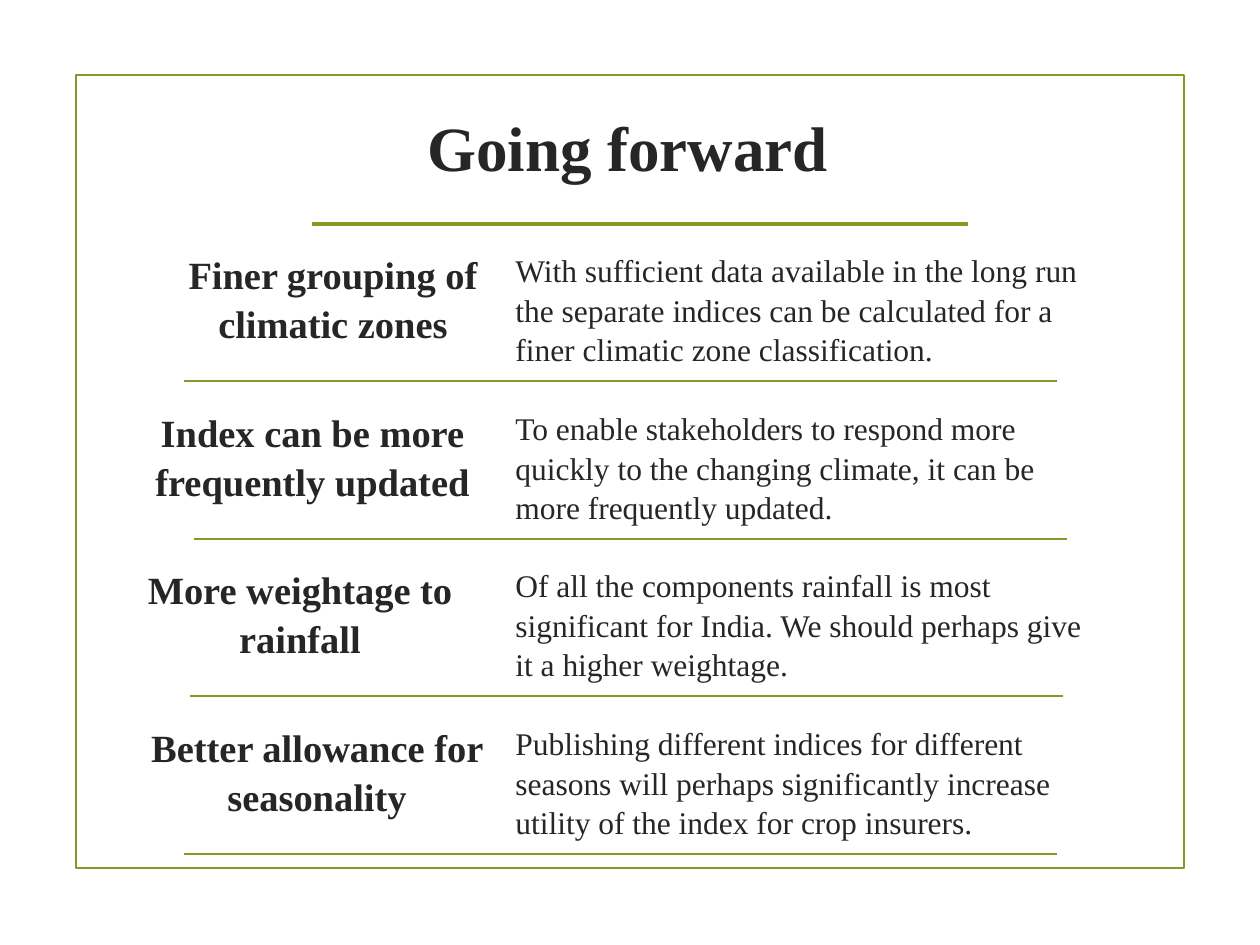
from lxml import etree
from pptx import Presentation
from pptx.dml.color import RGBColor
from pptx.enum.shapes import MSO_CONNECTOR, MSO_SHAPE
from pptx.enum.text import MSO_ANCHOR, PP_ALIGN
from pptx.oxml.ns import qn
from pptx.util import Pt

EMU_PER_PX = 914400 / 126
COLORS = {"ink": "262626", "olive": "83992A", "paper": "FFFFFF"}
FONT = "Times New Roman"
STRAIGHT = MSO_CONNECTOR.STRAIGHT
RECTANGLE = MSO_SHAPE.RECTANGLE
LEFT, CENTER = PP_ALIGN.LEFT, PP_ALIGN.CENTER
TOP, MIDDLE = MSO_ANCHOR.TOP, MSO_ANCHOR.MIDDLE

# heading, heading left, heading width, rule left, detail
STEPS = [
    ("Finer grouping of climatic zones", 163, 340, 184,
     "With sufficient data available in the long run the separate indices "
     "can be calculated for a finer climatic zone classification."),
    ("Index can be more frequently updated", 123, 379, 194,
     "To enable stakeholders to respond more quickly to the changing climate, "
     "it can be more frequently updated."),
    ("More weightage to rainfall", 96, 408, 190,
     "Of all the components rainfall is most significant for India. "
     "We should perhaps give it a higher weightage."),
    ("Better allowance for seasonality", 130, 374, 184,
     "Publishing different indices for different seasons will perhaps "
     "significantly increase utility of the index for crop insurers."),
]
FIRST_TOP = 243
TWO_ROWS = 315
RULE_DROP = 138
RULE_WIDTH = 873
DETAIL_LEFT, DETAIL_WIDTH = 503, 595


def px(length):
    return round(length * EMU_PER_PX)


def rgb(name):
    return RGBColor.from_string(COLORS[name])


class SlideBuilder:
    def __init__(self, slide):
        self.slide = slide
        slide.background.fill.solid()
        slide.background.fill.fore_color.rgb = rgb("paper")

    def frame(self, left, top, width, height):
        border = self.slide.shapes.add_shape(
            RECTANGLE, px(left), px(top), px(width), px(height))
        border.shadow.inherit = False
        border.fill.background()
        border.line.color.rgb = rgb("olive")
        border.line.width = Pt(1.25)

    def rule(self, left, top, width, weight=1.25):
        line = self.slide.shapes.add_connector(
            STRAIGHT, px(left), px(top), px(left + width), px(top))
        line.line.color.rgb = rgb("olive")
        line.line.width = Pt(weight)
        etree.SubElement(line._element.spPr, qn("a:effectLst"))

    def text(self, words, left, top, width, height, size,
             bold=False, align=LEFT, anchor=TOP, spacing=1.05):
        box = self.slide.shapes.add_textbox(
            px(left), px(top), px(width), px(height))
        frame = box.text_frame
        frame.word_wrap = True
        frame.vertical_anchor = anchor
        frame.text = words
        paragraph = frame.paragraphs[0]
        paragraph.alignment = align
        paragraph.line_spacing = spacing
        font = paragraph.runs[0].font
        font.name = FONT
        font.size = Pt(size)
        font.bold = bold
        font.color.rgb = rgb("ink")


def main():
    deck = Presentation()
    deck.slide_width, deck.slide_height = px(1260), px(945)
    page = SlideBuilder(deck.slides.add_slide(deck.slide_layouts[6]))

    page.frame(76, 75, 1108, 793)
    page.text("Going forward", 159, 76, 937, 141, 36,
              bold=True, align=CENTER, anchor=MIDDLE, spacing=1.0)
    page.rule(312, 224, 656, weight=2)

    for row, (heading, left, width, rule_left, detail) in enumerate(STEPS):
        top = FIRST_TOP + (TWO_ROWS * row + 1) // 2
        page.text(heading, left, top, width, 110, 22, bold=True, align=CENTER)
        page.text(detail, DETAIL_LEFT, top, DETAIL_WIDTH, 120, 18)
        page.rule(rule_left, top + RULE_DROP, RULE_WIDTH)

    deck.save("out.pptx")


if __name__ == "__main__":
    main()
